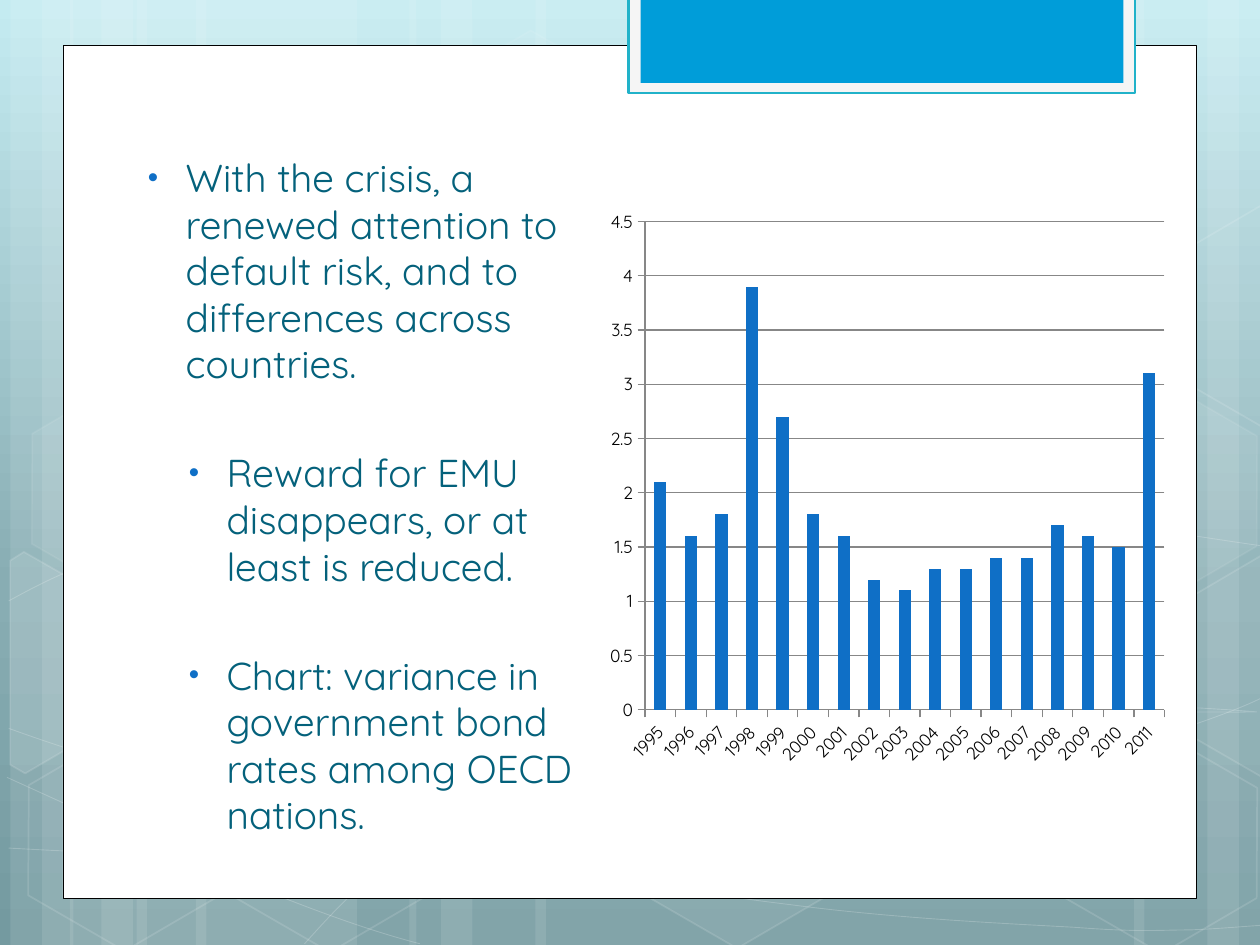
from copy import deepcopy
from dataclasses import dataclass

from lxml.etree import SubElement as Sub
from pptx import Presentation
from pptx.chart.data import CategoryChartData as ChartData
from pptx.dml.color import RGBColor as RGB
from pptx.enum.chart import XL_CHART_TYPE as Chart, XL_TICK_MARK as Tick
from pptx.enum.shapes import MSO_SHAPE as Kind
from pptx.oxml.ns import qn
from pptx.util import Pt

FONT = "Quicksand"
COLORS = {
    "sky": "C4EBF1", "mist": "88ADB3", "slate": "749AA0", "white": "FFFFFF",
    "black": "000000", "pale": "F5F5F5", "teal": "21B2C9", "cyan": "009DD9",
    "blue": "0F6FC6", "ink": "04617B", "grid": "878787",
}


@dataclass
class Style:
    fill: str = ""
    alpha: int = 100
    line: str = ""
    width: float = 1
    fade: int = 100


@dataclass
class Box:
    left: float
    top: float
    width: float
    height: float
    style: Style
    kind: Kind = Kind.RECTANGLE
    turn: float = 0


@dataclass
class Path:
    points: list
    style: Style
    curved: bool = False


@dataclass
class Item:
    text: str
    indent: float
    before: float


def glass(alpha: int, fade: int) -> Style:
    return Style("white" if alpha else "", alpha, "white", 1, fade)


def hexa(left: float, top: float, alpha: int, fade: int) -> Box:
    return Box(left, top, 126, 109.4, glass(alpha, fade), Kind.HEXAGON, 30)


VEIL = Style("white", 10)
THREAD = Style("", 100, "white", 0.5, 20)
STRIPES = [(78, 126), (6, 36), (24, 60), (112, 126), (40, 36), (58, 60),
           (528, 126), (690, 36), (648, 60), (306, 222), (234, 36), (252, 60)]
CURVES = [
    [(5, 484.6), (44, 486.7), (83, 488.9), (137, 488.2), (191, 487.4),
     (258, 486), (330, 478.8), (402, 471.6), (504, 457.9), (570, 444.2),
     (636, 430.6), (703, 409), (725, 396.7)],
    [(5, 343.4), (26, 331.9), (47, 321.1), (87, 310.3), (128, 299.5),
     (186, 283.7), (250, 278.6), (314, 273.6), (392, 272.9), (471, 278.6),
     (550, 284.4), (682, 306.7), (725, 312.5)],
    [(4, 444.2), (91, 483.8), (178, 523.4), (240, 539.3)],
    [(5, 416.2), (27, 424.1), (50, 432), (92, 443.5), (134, 454.3),
     (197, 472.3), (257, 484.6), (317, 496.8), (392, 509.8), (452, 517),
     (512, 524.9), (576, 527.8), (614, 529.9), (652, 532.8), (662, 531.4),
     (680, 531.4), (699, 530.6), (712, 529.2), (725, 528.5)],
    [(174, 539.3), (187, 524.9), (200, 510.5), (217, 497.5), (235, 484.6),
     (259, 470.2), (279, 460.1), (300, 450), (312, 445.7), (338, 438.5),
     (364, 431.3), (413, 421.2), (438, 416.2), (464, 411.1), (467, 411.1),
     (490, 409.7), (512, 407.5), (547, 405.4), (572, 404.6), (597, 403.9),
     (638, 404.6), (638, 404.6), (654, 404.6), (670, 404.6), (686, 404.6),
     (699, 405.4), (711, 406.1), (718, 406.8), (724, 407.5), (722, 406.8),
     (724, 407.5)][:-2],
]
CELLS = [
    hexa(240.5, 26, 4, 8),
    hexa(358, 424, 6, 12),
    Path([(5.8, 320.4), (13.7, 315.4), (69, 347), (68.4, 410.4),
          (14.4, 442), (5.8, 437)], glass(10, 12)),
    hexa(8, 425.5, 0, 12),
    hexa(10, 224.6, 7, 8),
    hexa(125.3, 426.2, 0, 12),
    hexa(542.2, 326.2, 10, 12),
    hexa(600.5, 427, 0, 12),
    hexa(600.5, 226, 7, 8),
    Path([(666.7, 349.2), (720.7, 317.5), (726.5, 321), (726.5, 441.4),
          (721.4, 444.2), (666.7, 412.6)], glass(4, 12)),
    Path([(666.7, 149), (720.7, 117.4), (727, 121), (726.5, 241.2),
          (721.4, 244), (666.7, 212.4)], glass(0, 12)),
]
PANELS = [
    Box(36, 26, 648, 487.2, Style("white", 100, "black", 0.5)),
    Box(359.2, -1.4, 289.6, 54.6, Style("pale", 100, "teal", 1.25)),
    Box(366, -1.4, 276, 48.8, Style("cyan")),
]
ITEMS = [
    Item("With the crisis, a renewed attention to default risk, and to "
         "differences across countries.", 27, 0),
    Item("Reward for EMU disappears, or at least is reduced.", 50.4, 35.6),
    Item("Chart: variance in government bond rates among OECD nations.",
         50.4, 35.6),
]
RATES = [2.1, 1.6, 1.8, 3.9, 2.7, 1.8, 1.6, 1.2, 1.1, 1.3, 1.3, 1.4, 1.4,
         1.7, 1.6, 1.5, 3.1]


def tint(name: str) -> RGB:
    return RGB.from_string(COLORS[name])


def fade(node, alpha: int) -> None:
    if alpha < 100:
        color = node.find(qn("a:solidFill")).find(qn("a:srgbClr"))
        Sub(color, qn("a:alpha")).set("val", str(alpha * 1000))


def paint(shape, style: Style) -> None:
    shape.shadow.inherit = False
    props = shape._element.spPr
    if style.fill:
        shape.fill.solid()
        shape.fill.fore_color.rgb = tint(style.fill)
        fade(props, style.alpha)
    else:
        shape.fill.background()
    if style.line:
        shape.line.color.rgb = tint(style.line)
        shape.line.width = Pt(style.width)
        fade(props.find(qn("a:ln")), style.fade)
    else:
        shape.line.fill.background()


def add_box(slide, box: Box) -> None:
    shape = slide.shapes.add_shape(
        box.kind, Pt(box.left), Pt(box.top), Pt(box.width), Pt(box.height))
    if box.kind == Kind.HEXAGON:
        shape.adjustments[0] = 0.285
    shape.rotation = box.turn
    paint(shape, box.style)


def bend(shape) -> None:
    lines = list(shape._element.iter(qn("a:lnTo")))
    for i in range(0, len(lines), 3):
        trio = lines[i:i + 3]
        curve = Sub(trio[0].getparent(), qn("a:cubicBezTo"))
        for line in trio:
            curve.append(line[0])
            line.getparent().remove(line)


def add_path(slide, path: Path) -> None:
    start, *rest = [(Pt(x), Pt(y)) for x, y in path.points]
    form = slide.shapes.build_freeform(*start)
    form.add_line_segments(rest, close=not path.curved)
    shape = form.convert_to_shape()
    if path.curved:
        bend(shape)
    paint(shape, path.style)


def add_back(slide) -> None:
    fill = slide.background.fill
    fill.gradient()
    fill.gradient_angle = 270
    first = fill.gradient_stops[0]._gs
    first.addnext(deepcopy(first))
    ramp = [(0, "sky"), (0.62, "mist"), (1, "slate")]
    for stop, (place, name) in zip(fill.gradient_stops, ramp):
        stop.position = place
        stop.color.rgb = tint(name)


def add_list(slide, items: list) -> None:
    frame = slide.shapes.add_textbox(
        Pt(72), Pt(84.2), Pt(279.4), Pt(373)).text_frame
    frame.word_wrap = True
    frame.text = "\n".join(item.text for item in items)
    for para, item in zip(frame.paragraphs, items):
        para.space_before = Pt(item.before)
        font = para.runs[0].font
        font.name, font.size = FONT, Pt(22.2)
        font.color.rgb = tint("ink")
        props = para._p.get_or_add_pPr()
        props.set("marL", str(Pt(item.indent)))
        props.set("indent", str(Pt(-21.6)))
        Sub(Sub(props, qn("a:buClr")), qn("a:srgbClr")).set(
            "val", COLORS["blue"])
        Sub(props, qn("a:buSzPct")).set("val", "76000")
        Sub(props, qn("a:buFont")).set("typeface", "Arial")
        Sub(props, qn("a:buChar")).set("char", "•")


def add_bars(slide, rates: list) -> None:
    data = ChartData()
    data.categories = [str(1995 + i) for i in range(len(rates))]
    data.add_series("Series 1", rates)
    chart = slide.shapes.add_chart(
        Chart.COLUMN_CLUSTERED, Pt(342), Pt(114), Pt(330), Pt(330), data).chart
    chart.has_legend = chart.has_title = False
    chart.font.name, chart.font.size = FONT, Pt(10)
    chart.font.color.rgb = tint("black")
    plot = chart.plots[0]
    plot.gap_width, plot.vary_by_categories = 150, False
    bars = plot.series[0].format.fill
    bars.solid()
    bars.fore_color.rgb = tint("blue")
    years, scale = chart.category_axis, chart.value_axis
    scale.minimum_scale, scale.maximum_scale, scale.major_unit = 0, 4.5, 0.5
    scale.has_major_gridlines = True
    scale.tick_labels.number_format = "General"
    scale.tick_labels.number_format_is_linked = False
    for part in (years, scale, scale.major_gridlines):
        part.format.line.color.rgb = tint("grid")
        part.format.line.width = Pt(0.75)
    for axis in (years, scale):
        axis.major_tick_mark = Tick.OUTSIDE
        axis.tick_labels.font.size = Pt(10)
    years._element.txPr.find(qn("a:bodyPr")).set("rot", "-2700000")


def main() -> None:
    deck = Presentation()
    deck.slide_width, deck.slide_height = Pt(720), Pt(540)
    slide = deck.slides.add_slide(deck.slide_layouts[6])
    add_back(slide)
    veils = [Box(left, 0, width, 540, VEIL) for left, width in STRIPES]
    threads = [Path(nodes, THREAD, True) for nodes in CURVES]
    for part in veils + threads + CELLS + PANELS:
        draw = add_box if isinstance(part, Box) else add_path
        draw(slide, part)
    add_list(slide, ITEMS)
    add_bars(slide, RATES)
    deck.save("out.pptx")


if __name__ == "__main__":
    main()
